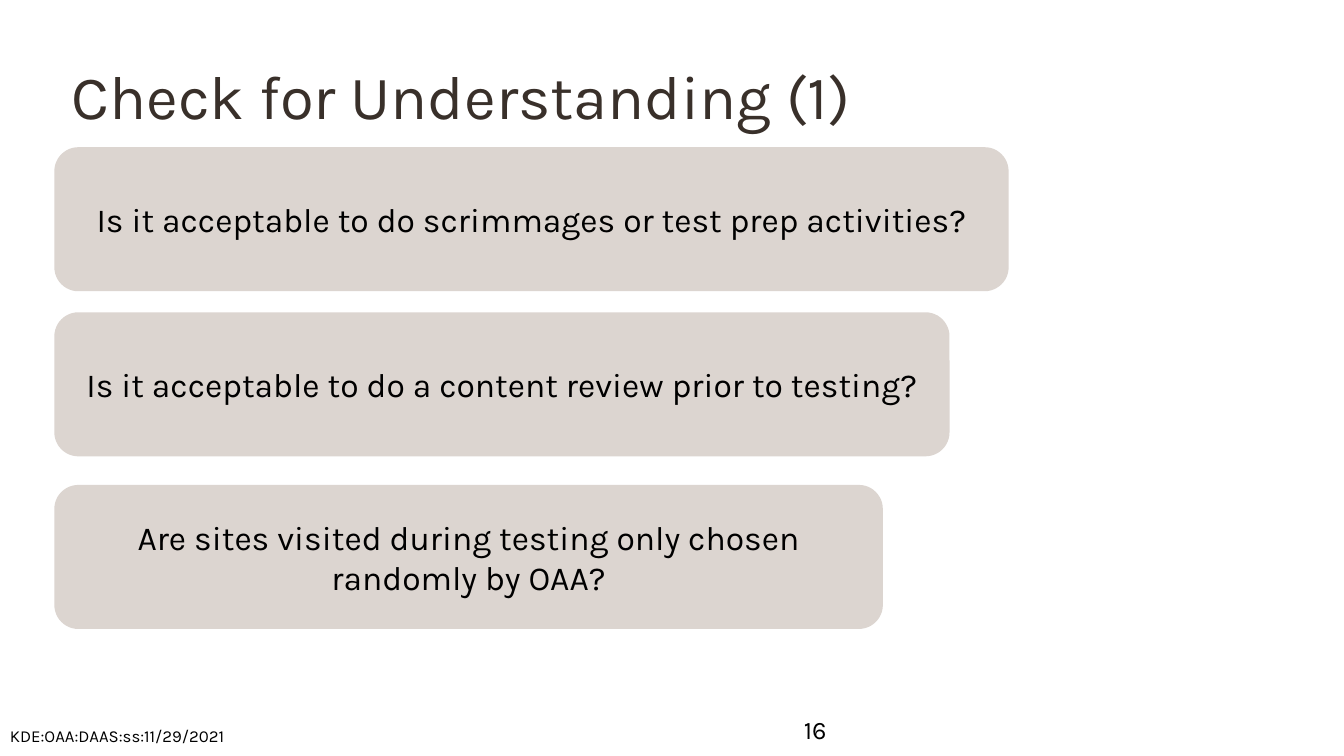
from lxml import etree
from pptx import Presentation
from pptx.dml.color import RGBColor
from pptx.enum import shapes, text
from pptx.util import Cm, Pt


def color(hex_value):
    return RGBColor.from_string(hex_value)


def write(shape, wording, size, align, ink="000000"):
    """Fill a shape with one vertically centred paragraph."""
    frame = shape.text_frame
    frame_format = {
        "word_wrap": True,
        "auto_size": text.MSO_AUTO_SIZE.NONE,
        "vertical_anchor": text.MSO_ANCHOR.MIDDLE,
    }
    for name, value in frame_format.items():
        setattr(frame, name, value)
    para = frame.paragraphs[0]
    para.alignment = align
    span = para.add_run()
    span.text = wording
    for name, value in {"name": "Karla", "size": Pt(size)}.items():
        setattr(span.font, name, value)
    span.font.color.rgb = color(ink)
    return para


deck = Presentation()
deck.slide_width, deck.slide_height = Cm(33.87), Cm(19.05)
page = deck.slides.add_slide(deck.slide_layouts[5])
align = text.PP_ALIGN

title = page.shapes.title
title_place = {"left": 1.55, "top": 0.69, "width": 23.88, "height": 3.66}
for name, value in title_place.items():
    setattr(title, name, Cm(value))
write(title, "Check for Understanding (1)", 44, align.LEFT, "39302A").line_spacing = 0.9

page_number = page.shapes.add_textbox(Cm(19.18), Cm(17.86), Cm(1.9), Cm(1.02))
write(page_number, "16", 18, align.RIGHT)

footer = page.shapes.add_textbox(Cm(0), Cm(18.03), Cm(11.43), Cm(1.02))
write(footer, "KDE:OAA:DAAS:ss:11/29/2021", 12, align.LEFT)

questions = [
    (3.71, 24.05, "Is it acceptable to do scrimmages or test prep activities?"),
    (7.87, 22.56, "Is it acceptable to do a content review prior to testing?"),
    (12.22, 20.88, "Are sites visited during testing only chosen randomly by OAA?"),
]
for top, width, question in questions:
    box = page.shapes.add_shape(
        shapes.MSO_SHAPE.ROUNDED_RECTANGLE, Cm(1.37), Cm(top), Cm(width), Cm(3.63)
    )
    box.shadow.inherit = False
    box.fill.solid()
    box.fill.fore_color.rgb = color("DCD5D0")
    box.line.fill.background()
    write(box, question, 24, align.CENTER)

deck.save("out.pptx")
